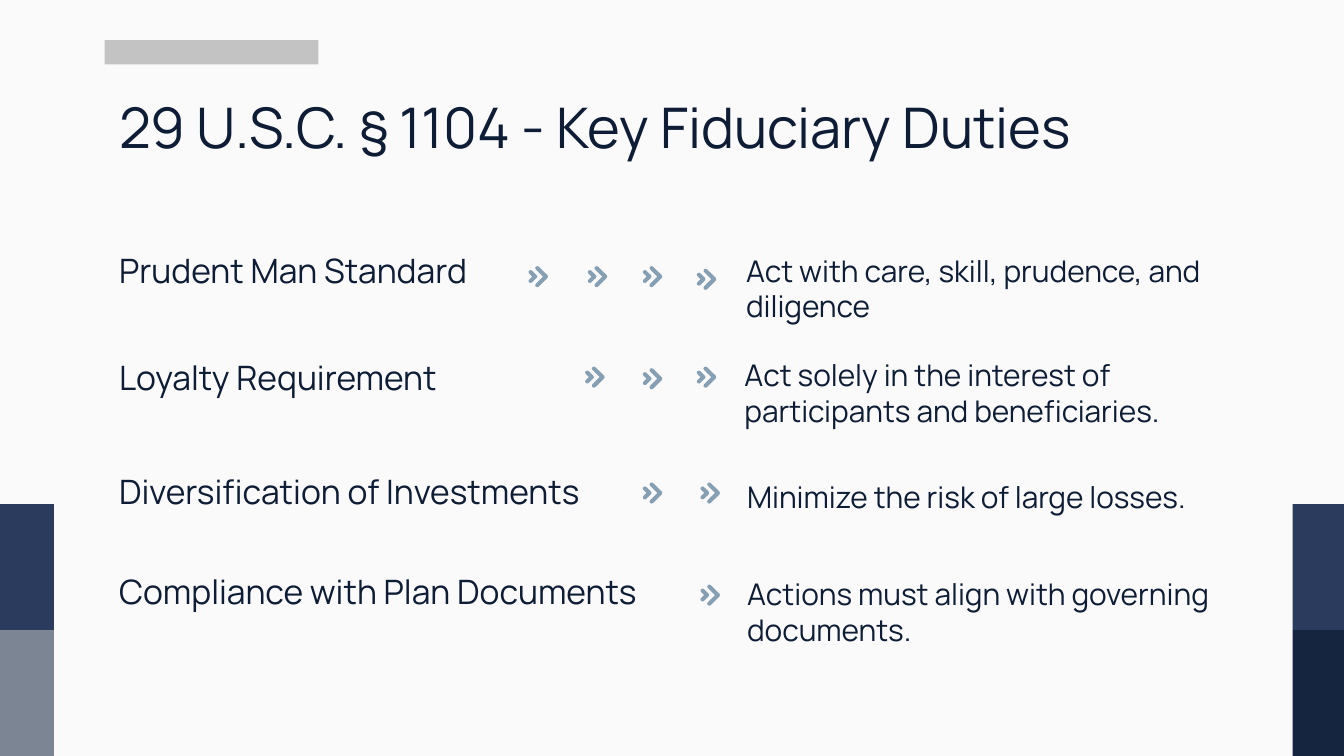
"""Build the slide on key fiduciary duties."""
from pptx import Presentation
from pptx import util as u
from pptx.dml.color import RGBColor
from pptx.enum import shapes, text
from pptx.oxml.ns import qn

PAPER = RGBColor(0xFA, 0xFA, 0xFA)
INK = RGBColor(0x0E, 0x1D, 0x35)
NAVY = RGBColor(0x2B, 0x3B, 0x5D)
DARK = RGBColor(0x15, 0x25, 0x3F)
SLATE = RGBColor(0x7C, 0x85, 0x94)
GREY = RGBColor(0xC3, 0xC3, 0xC3)
STEEL = RGBColor(0x86, 0x9F, 0xB2)
FONT = "Manrope"

BARS = [
    (24.43, 11.91, 1.02, 2.38, DARK),
    (24.43, 9.53, 1.02, 2.38, NAVY),
    (0, 11.91, 1.02, 2.38, SLATE),
    (0, 9.53, 1.02, 2.38, NAVY),
    (1.98, 0.76, 4.04, 0.46, GREY),
]
DUTIES = [
    ("Prudent Man Standard", (2, 4.62, 9.12, 1.12)),
    ("Loyalty Requirement", (2, 6.63, 7.16, 1.12)),
    ("Diversification of Investments", (2, 8.79, 10.06, 1.12)),
    ("Compliance with Plan Documents", (2, 10.69, 11.07, 1.12)),
]
NOTES = [
    ("Act with care, skill, prudence, and diligence", (13.85, 4.52, 10.06, 1.04)),
    ("Act solely in the interest of participants and beneficiaries.",
     (13.82, 6.5, 10.06, 1.57)),
    ("Minimize the risk of large losses.", (13.87, 8.79, 10.06, 1.12)),
    ("Actions must align with governing documents.", (13.87, 10.64, 10.06, 1.12)),
]
MARKS = [
    (9.98, 5.03), (11.1, 5.03), (12.14, 5.03), (13.16, 5.08),
    (11.05, 6.93), (12.14, 6.96), (13.16, 6.93),
    (12.14, 9.12), (13.23, 9.12),
    (13.23, 11.05),
]
WINGS = [
    [(70, 0), (58, 4), (53, 14), (57, 24), (111, 78), (57, 132), (53, 143),
     (58, 153), (70, 157), (80, 152), (144, 89), (148, 78), (144, 67), (80, 5)],
    [(20, 30), (8, 34), (3, 44), (7, 54), (31, 78), (7, 102), (3, 112),
     (8, 122), (20, 126), (30, 121), (64, 88), (68, 78), (64, 68), (30, 35)],
]


def paint(shape, color):
    """Give a shape a flat fill with no line or shadow."""
    shape.fill.solid()
    shape.fill.fore_color.rgb = color
    shape.line.fill.background()
    shape.shadow.inherit = False


def bar(slide, x, y, w, h, color):
    """Draw a plain rectangle."""
    box = slide.shapes.add_shape(
        shapes.MSO_SHAPE.RECTANGLE, u.Cm(x), u.Cm(y), u.Cm(w), u.Cm(h))
    paint(box, color)


def mark(slide, x, y):
    """Draw a double chevron from its two wings, set in thousandths of an inch."""
    for wing in WINGS:
        pen = slide.shapes.build_freeform(*wing[0], scale=u.Cm(0.00254))
        pen.add_line_segments(wing[1:], close=True)
        paint(pen.convert_to_shape(u.Cm(x), u.Cm(y)), STEEL)


def write(shape, words, area, size, anchor=text.MSO_ANCHOR.TOP):
    """Place a text shape and format its single paragraph."""
    shape.left, shape.top, shape.width, shape.height = map(u.Cm, area)
    frame = shape.text_frame
    frame.text = words
    frame.word_wrap = True
    frame.auto_size = text.MSO_AUTO_SIZE.NONE
    frame.vertical_anchor = anchor
    for side in ("left", "top", "right", "bottom"):
        setattr(frame, f"margin_{side}", u.Cm(0.25))
    para = frame.paragraphs[0]
    para.alignment = text.PP_ALIGN.LEFT
    para.space_before = u.Pt(0)
    props = para._p.get_or_add_pPr()
    props.set("marL", "0")
    props.set("indent", "0")
    props.append(props.makeelement(qn("a:buNone"), {}))
    font = para.runs[0].font
    font.name, font.size, font.bold = FONT, u.Pt(size), False
    font.color.rgb = INK


def main():
    """Assemble and save the slide."""
    deck = Presentation()
    deck.slide_width, deck.slide_height = u.Cm(25.4), u.Cm(14.29)
    slide = deck.slides.add_slide(deck.slide_layouts.get_by_name("Comparison"))
    slide.background.fill.solid()
    slide.background.fill.fore_color.rgb = PAPER
    for item in BARS:
        bar(slide, *item)
    title, *slots = slide.placeholders
    write(title, "29 U.S.C. § 1104 - Key Fiduciary Duties", (2, 1.5, 21.41, 1.6), 30)
    for slot, (words, area) in zip(slots, DUTIES):
        write(slot, words, area, 18, text.MSO_ANCHOR.BOTTOM)
    for words, area in NOTES:
        write(slide.shapes.add_textbox(0, 0, 0, 0), words, area, 16)
    for spot in MARKS:
        mark(slide, *spot)
    deck.save("out.pptx")


if __name__ == "__main__":
    main()
